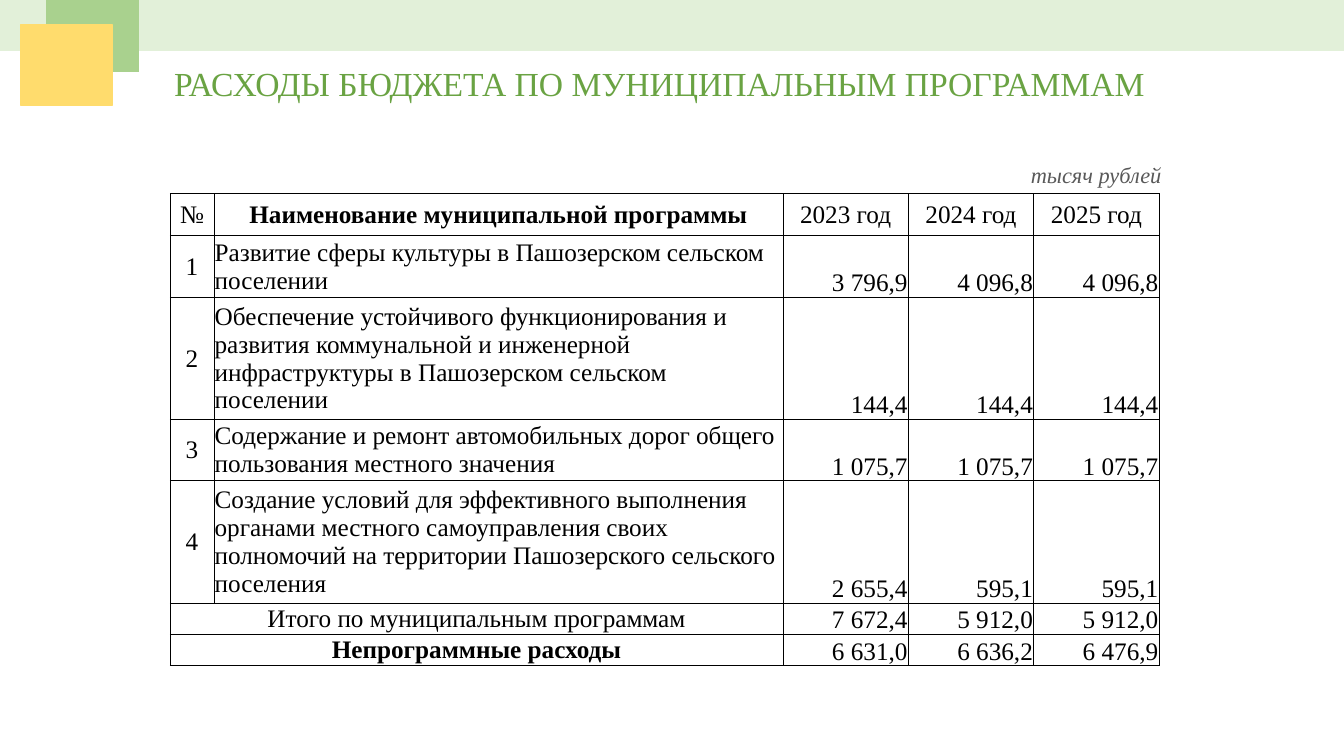
from lxml.etree import SubElement
from pptx import Presentation
from pptx.dml.color import RGBColor
from pptx.enum.shapes import MSO_SHAPE
from pptx.enum.text import MSO_ANCHOR, MSO_AUTO_SIZE, PP_ALIGN
from pptx.oxml.ns import qn
from pptx.util import Cm, Pt

FACE = "Times New Roman"
BLACK, WHITE = "000000", "FFFFFF"
COLS = [1.1, 14.34, 3.16, 3.16, 3.16]
ROWS = [1.06, 1.55, 3.07, 1.55, 3.08, 0.79, 0.79]
DATA = [
    ["№", "Наименование муниципальной программы",
     "2023 год", "2024 год", "2025 год"],
    ["1", "Развитие сферы культуры в Пашозерском сельском поселении",
     "3 796,9", "4 096,8", "4 096,8"],
    ["2", "Обеспечение устойчивого функционирования и развития коммунальной "
     "и инженерной инфраструктуры в Пашозерском сельском поселении",
     "144,4", "144,4", "144,4"],
    ["3", "Содержание и ремонт автомобильных дорог общего пользования "
     "местного значения", "1 075,7", "1 075,7", "1 075,7"],
    ["4", "Создание условий для эффективного выполнения органами местного "
     "самоуправления своих полномочий на территории Пашозерского сельского "
     "поселения", "2 655,4", "595,1", "595,1"],
    ["Итого по муниципальным программам", "",
     "7 672,4", "5 912,0", "5 912,0"],
    ["Непрограммные расходы", "", "6 631,0", "6 636,2", "6 476,9"],
]
TOTAL, OTHER = 5, 6  # rows whose first two cells are merged


def tint(code):
    return RGBColor.from_string(code)


def apply(item, form):
    for name, value in form.items():
        setattr(item, name, value)


def style(font, size, code, **form):
    apply(font, {"name": FACE, "size": Pt(size), **form})
    font.color.rgb = tint(code)


def block(slide, box, code):
    shape = slide.shapes.add_shape(MSO_SHAPE.RECTANGLE, *map(Cm, box))
    shape.shadow.inherit = False
    shape.fill.solid()
    shape.fill.fore_color.rgb = tint(code)
    shape.line.color.rgb = tint(code)
    shape.line.width = Pt(1)


def label(slide, box, text, size, code, **form):
    frame = slide.shapes.add_textbox(*map(Cm, box)).text_frame
    apply(frame, {"word_wrap": False,
                  "auto_size": MSO_AUTO_SIZE.SHAPE_TO_FIT_TEXT})
    run = frame.paragraphs[0].add_run()
    run.text = text
    style(run.font, size, code, **form)


def banner(slide, box):
    """Top band with two overlapping squares."""
    x, y, w, h = box
    block(slide, box, "E2F0D9")
    block(slide, (x + 1.18, y, 2.32, 1.81), "A9D18E")
    block(slide, (x + 0.53, y + 0.62, 2.29, 2.04), "FFDC6D")


def heading(slide, box):
    """Title, with the unit note at the lower right."""
    x, y, w, h = box
    label(slide, (x, y, w, 1.28),
          "РАСХОДЫ БЮДЖЕТА ПО МУНИЦИПАЛЬНЫМ ПРОГРАММАМ", 24, "6AA343")
    label(slide, (x + w - 3.63, y + h - 0.94, 3.86, 0.94),
          "тысяч рублей", 16, "595959", italic=True)


def border(cell):
    props = cell._tc.get_or_add_tcPr()
    for side in "LRTB":
        line = SubElement(props, qn("a:ln" + side), w=str(Pt(0.5)))
        fill = SubElement(line, qn("a:solidFill"))
        SubElement(fill, qn("a:srgbClr"), val=BLACK)


def budget(slide, box):
    """Spending table; columns and rows share out the box."""
    x, y, w, h = box
    table = slide.shapes.add_table(len(ROWS), len(COLS),
                                   *map(Cm, box)).table
    apply(table, {"first_row": False, "horz_banding": False})
    for col, part in zip(table.columns, COLS):
        col.width = Cm(w * part / sum(COLS))
    for row, part in zip(table.rows, ROWS):
        row.height = Cm(h * part / sum(ROWS))
    for r in (TOTAL, OTHER):
        table.cell(r, 0).merge(table.cell(r, 1))

    for r, row in enumerate(DATA):
        for c, text in enumerate(row):
            cell = table.cell(r, c)
            border(cell)
            name = c == 1 and 0 < r < TOTAL
            value = c > 1 and r > 0
            if name or (r == TOTAL and c == 0):
                cell.fill.solid()
                cell.fill.fore_color.rgb = tint(WHITE)
            else:
                cell.fill.background()
            if cell.is_spanned:
                continue
            apply(cell, {
                "margin_left": Cm(0.02), "margin_right": Cm(0.02),
                "margin_top": Cm(0.02), "margin_bottom": 0,
                "vertical_anchor":
                    MSO_ANCHOR.BOTTOM if value else MSO_ANCHOR.MIDDLE})
            para = cell.text_frame.paragraphs[0]
            para.alignment = (PP_ALIGN.RIGHT if value else
                              PP_ALIGN.LEFT if name else PP_ALIGN.CENTER)
            run = para.add_run()
            run.text = text
            style(run.font, 18, BLACK, bold=(r, c) in ((0, 1), (OTHER, 0)))


def main():
    deck = Presentation()
    apply(deck, {"slide_width": Cm(33.87), "slide_height": Cm(19.05)})
    slide = deck.slides.add_slide(deck.slide_layouts[6])
    heading(slide, (4.14, 1.47, 25.22, 3.41))
    banner(slide, (0, 0, 33.87, 1.27))
    budget(slide, (4.29, 4.88, 24.92, 11.89))
    deck.save("out.pptx")


if __name__ == "__main__":
    main()
